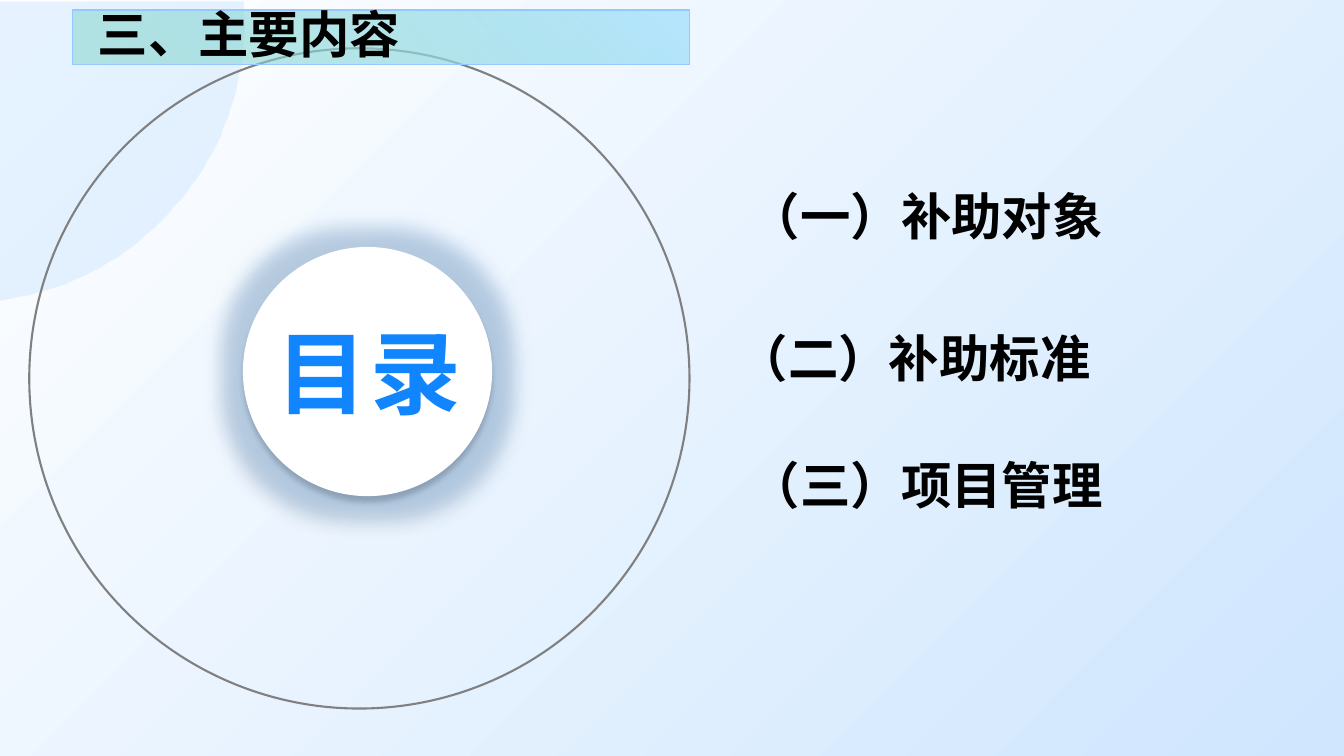
"""Build the contents slide: a round title emblem and three section headings."""
from lxml import etree
from pptx import Presentation, util as u
from pptx.dml.color import RGBColor
from pptx.enum import shapes, text
from pptx.oxml import parse_xml
from pptx.oxml.ns import qn

NAMESPACE = 'xmlns:a="http://schemas.openxmlformats.org/drawingml/2006/main"'
CJK_FONT = "Noto Sans CJK SC"


def color(value):
    return RGBColor.from_string(value)


def add_text(words, left, top, width, height, size=36, font=CJK_FONT, fill="000000"):
    box = slide.shapes.add_textbox(u.Pt(left), u.Pt(top), u.Pt(width), u.Pt(height))
    frame = box.text_frame
    frame.margin_left = frame.margin_right = frame.margin_top = frame.margin_bottom = 0
    frame.vertical_anchor = text.MSO_ANCHOR.MIDDLE
    frame.word_wrap = True
    paragraph = frame.paragraphs[0]
    paragraph.text = words
    paragraph.line_spacing = 0.9
    paragraph.font.size = u.Pt(size)
    paragraph.font.bold = True
    paragraph.font.name = font
    paragraph.font.color.rgb = color(fill)
    properties = paragraph._p.pPr.find(qn("a:defRPr"))
    etree.SubElement(properties, qn("a:ea")).set("typeface", CJK_FONT)
    return frame


presentation = Presentation()
presentation.slide_width = u.Pt(960)
presentation.slide_height = u.Pt(540)
slide = presentation.slides.add_slide(presentation.slide_layouts[6])

background = slide.background.fill
background.gradient()
background.gradient_angle = 315
for stop, value in zip(background.gradient_stops, ("FFFFFF", "CFE6FE")):
    stop.color.rgb = color(value)

arc = [(174.96, 14.4)]
curves = [((174.96, 112.3), (105.84, 193.7), (13.68, 212.4))]
for first, second, end in curves:
    start = arc[-1]
    for step in range(1, 41):
        t = step / 40
        weights = ((1 - t) ** 3, 3 * t * (1 - t) ** 2, 3 * t * t * (1 - t), t ** 3)
        points = (start, first, second, end)
        arc.append(tuple(sum(w * p[axis] for w, p in zip(weights, points)) for axis in (0, 1)))
builder = slide.shapes.build_freeform(0, 0.72, scale=u.Pt(1))
builder.add_line_segments([(174.24, 0.72), *arc, (0, 214.56)], close=True)
corner = builder.convert_to_shape()
corner.shadow.inherit = False
corner.fill.solid()
corner.fill.fore_color.rgb = color("CFE7FF")
corner_color = corner._element.spPr.find(qn("a:solidFill"))[0]
etree.SubElement(corner_color, qn("a:alpha")).set("val", "50000")
corner.line.fill.background()

ring = slide.shapes.add_shape(shapes.MSO_SHAPE.OVAL, u.Pt(20.9), u.Pt(34.5), u.Pt(471.6), u.Pt(471.6))
ring.shadow.inherit = False
ring.fill.background()
ring.line.color.rgb = color("808080")
ring.line.width = u.Pt(1.5)

emblem = slide.shapes.add_shape(shapes.MSO_SHAPE.OVAL, u.Pt(173.5), u.Pt(176.4), u.Pt(178), u.Pt(178))
emblem.fill.solid()
emblem.fill.fore_color.rgb = color("FFFFFF")
emblem.line.fill.background()
emblem._element.spPr.append(parse_xml(
    f'<a:effectLst {NAMESPACE}>'
    f'<a:glow rad="{u.Pt(28)}"><a:srgbClr val="7FB0E0"><a:alpha val="35000"/></a:srgbClr></a:glow>'
    f'<a:outerShdw blurRad="{u.Pt(4)}" dist="{u.Pt(4)}" dir="5400000" algn="t" rotWithShape="0">'
    '<a:srgbClr val="000000"><a:alpha val="36000"/></a:srgbClr></a:outerShdw></a:effectLst>'))

title = add_text("目录", 173.5, 230.4, 178, 69.1, 64.8, "Arial", "1185FE")
title.margin_left, title.margin_right = u.Pt(7.9), u.Pt(5.8)
title.margin_top = title.margin_bottom = u.Pt(2.9)
title_paragraph = title.paragraphs[0]
title_paragraph.alignment = text.PP_ALIGN.CENTER
title_paragraph.line_spacing = 1.0
title_paragraph._p.pPr.find(qn("a:defRPr")).set("spc", "200")

banner = slide.shapes.add_shape(shapes.MSO_SHAPE.RECTANGLE, u.Pt(51.8), u.Pt(7.2), u.Pt(440.6), u.Pt(38.9))
banner.shadow.inherit = False
banner.line.color.rgb = color("94C8FF")
banner.line.width = u.Pt(1)
banner_properties = banner._element.spPr
banner_properties.find(qn("a:xfrm")).set("flipH", "1")
banner_properties.find(qn("a:prstGeom")).addnext(parse_xml(
    f'<a:gradFill {NAMESPACE} rotWithShape="1"><a:gsLst>'
    '<a:gs pos="0"><a:srgbClr val="B0E4FF"><a:alpha val="90000"/></a:srgbClr></a:gs>'
    '<a:gs pos="85000"><a:srgbClr val="7CD3CA"><a:alpha val="50000"/></a:srgbClr></a:gs>'
    '</a:gsLst><a:path path="circle"><a:fillToRect l="100000" b="100000"/></a:path></a:gradFill>'))

heading = add_text("三、主要内容", 69.8, 7.2, 216.7, 38.9)
heading.word_wrap = False
heading.auto_size = text.MSO_AUTO_SIZE.SHAPE_TO_FIT_TEXT

for words, left, top, width in (
    ("（一）补助对象", 535.7, 136.8, 259.9),
    ("（二）补助标准", 527, 238.3, 268.6),
    ("（三）项目管理", 535.7, 329, 268.6),
):
    section = add_text(words, left, top, width, 38.9)
    section.auto_size = text.MSO_AUTO_SIZE.SHAPE_TO_FIT_TEXT

presentation.save("out.pptx")
